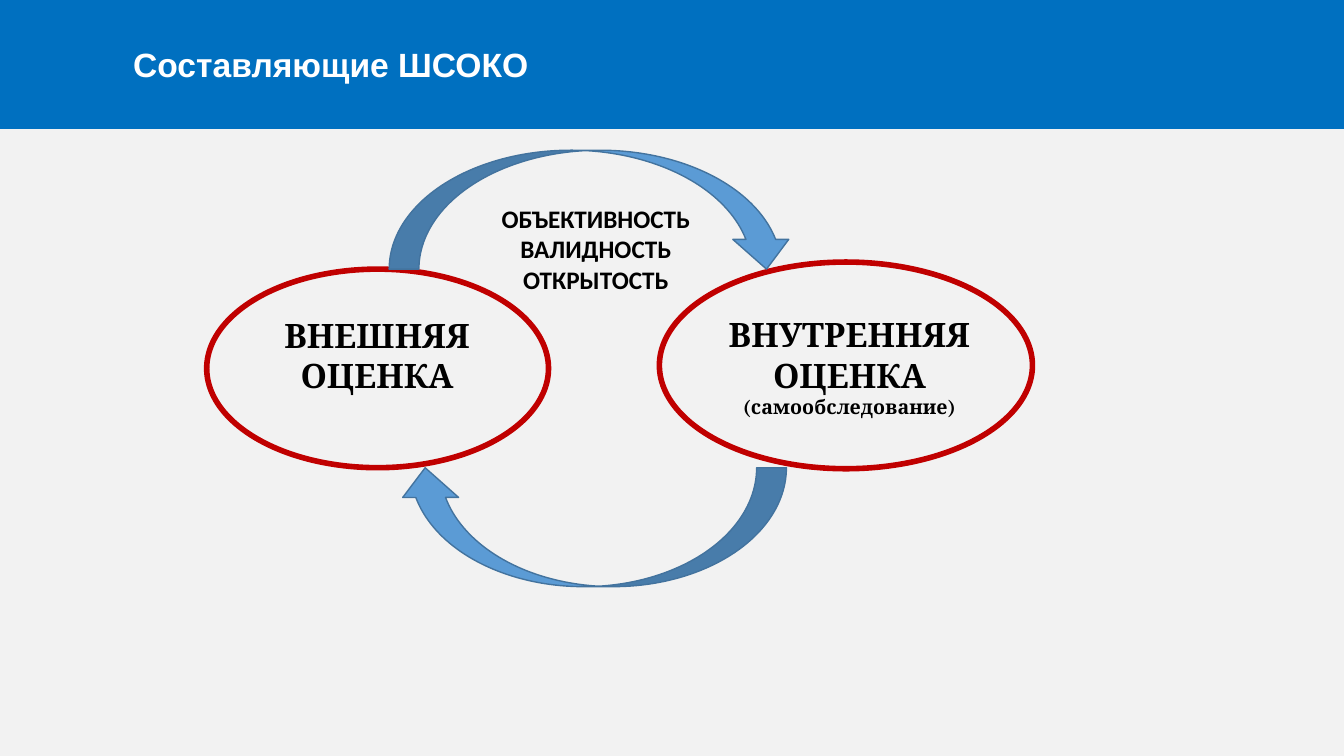
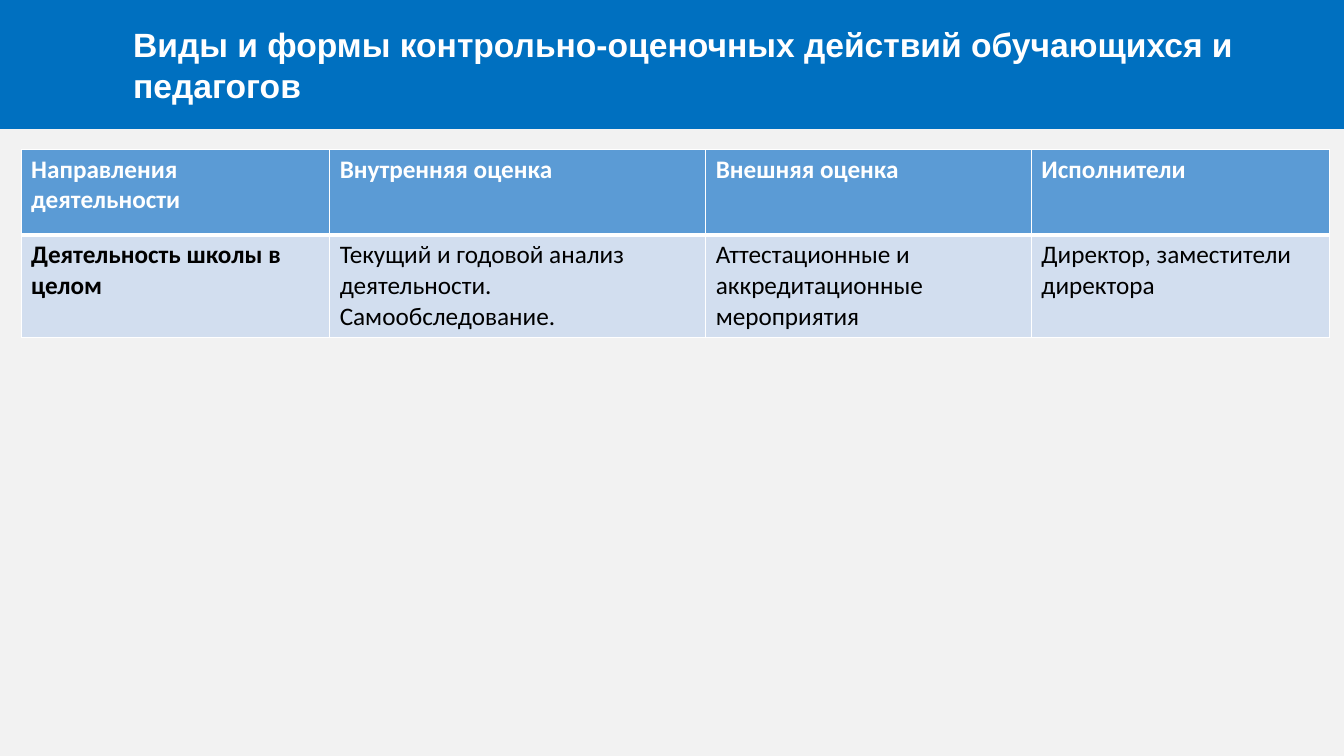
from dataclasses import dataclass

from lxml import etree
from pptx import Presentation
from pptx.dml.color import RGBColor
from pptx.enum.shapes import MSO_SHAPE
from pptx.enum.text import MSO_ANCHOR, MSO_AUTO_SIZE, PP_ALIGN
from pptx.oxml.ns import qn
from pptx.util import Emu, Pt

PX = 9144  # one hundred px to the inch
BAND = MSO_SHAPE.FLOWCHART_PROCESS
OVAL = MSO_SHAPE.OVAL
ARROW_OVER = MSO_SHAPE.CURVED_DOWN_ARROW
ARROW_UNDER = MSO_SHAPE.CURVED_UP_ARROW
LEFT, CENTER = PP_ALIGN.LEFT, PP_ALIGN.CENTER


@dataclass(frozen=True)
class Theme:
    paper: str = "F2F2F2"
    band: str = "0070C0"
    white: str = "FFFFFF"
    black: str = "000000"
    oval_line: str = "C00000"
    accent: str = "5B9BD5"
    accent_line: str = "43739E"
    table_body: str = "D2DEEF"
    title_font: str = "Arial"
    oval_font: str = "Cambria"
    body_font: str = "Calibri"
    title_size: int = 24
    oval_size: int = 24
    note_size: int = 14
    body_size: int = 18


THEME = Theme()
SLIDE_SIZE = (1333, 750)
BAND_BOX = (0, 0, 1333, 128)
TITLE_BOX = (122, 0, 1166, 128)

CYCLE_TITLE = "Составляющие ШСОКО"
OVALS = [(205, 267, 339, 197), (654, 260, 370, 205)]
ARROWS = [  # shape, box, mirrored
    (ARROW_OVER, (386, 149, 402, 118), False),
    (ARROW_UNDER, (394, 464, 386, 118), True),
]
ARROW_ADJUSTMENTS = (0.25, 0.47, 0.25)
LABELS = [  # box, font, lines with their sizes
    ((252, 307, 244, 91), THEME.oval_font, [("ВНЕШНЯЯ ОЦЕНКА", THEME.oval_size)]),
    ((693, 307, 299, 114), THEME.oval_font,
     [("ВНУТРЕННЯЯ ОЦЕНКА", THEME.oval_size),
      ("(самообследование)", THEME.note_size)]),
    ((465, 197, 252, 101), THEME.body_font,
     [(word, THEME.body_size)
      for word in ("ОБЪЕКТИВНОСТЬ", "ВАЛИДНОСТЬ", "ОТКРЫТОСТЬ")]),
]

TABLE_TITLE = "Виды и формы контрольно-оценочных действий обучающихся и педагогов"
TABLE_ORIGIN = (21, 148)
COLUMN_WIDTHS = [306, 373, 323, 296]
ROW_HEIGHTS = [85, 101]
TABLE_ROWS = [
    ["Направления деятельности", "Внутренняя оценка", "Внешняя оценка", "Исполнители"],
    ["Деятельность школы в целом",
     "Текущий и годовой анализ деятельности. Самообследование.",
     "Аттестационные и аккредитационные мероприятия",
     "Директор, заместители директора"],
]


def px(*lengths):
    return [Emu(length * PX) for length in lengths]


def color(code):
    return RGBColor.from_string(code)


def add_span(para, text, font, size, code, bold=True):
    span = para.add_run()
    span.text = text
    span.font.name = font
    span.font.size = Pt(size)
    span.font.bold = bold
    span.font.color.rgb = color(code)
    return span


def add_text_shadow(span):
    effects = etree.Element(qn("a:effectLst"))
    shadow = etree.SubElement(effects, qn("a:outerShdw"), blurRad="38100",
                              dist="38100", dir="5400000", algn="t")
    tint = etree.SubElement(shadow, qn("a:srgbClr"), val=THEME.black)
    etree.SubElement(tint, qn("a:alpha"), val="45000")
    span.font._element.find(qn("a:solidFill")).addnext(effects)


def add_figure(shapes, kind, box, fill=None, line=None, width=1):
    figure = shapes.add_shape(kind, *px(*box))
    figure.shadow.inherit = False
    if fill:
        figure.fill.solid()
        figure.fill.fore_color.rgb = color(fill)
    else:
        figure.fill.background()
    if line:
        figure.line.color.rgb = color(line)
        figure.line.width = Pt(width)
    else:
        figure.line.fill.background()
    return figure


def add_page(deck, title):
    page = deck.slides.add_slide(deck.slide_layouts[5])
    band = add_figure(page.shapes, BAND, BAND_BOX, THEME.band)
    heading = page.shapes.title
    heading._element.addprevious(band._element)
    heading.left, heading.top, heading.width, heading.height = px(*TITLE_BOX)
    frame = heading.text_frame
    frame.word_wrap = True
    frame.auto_size = MSO_AUTO_SIZE.NONE
    frame.vertical_anchor = MSO_ANCHOR.MIDDLE
    para = frame.paragraphs[0]
    para.alignment = LEFT
    add_text_shadow(add_span(para, title, THEME.title_font, THEME.title_size, THEME.white))
    return page


def add_label(page, box, font, lines):
    frame = page.shapes.add_textbox(*px(*box)).text_frame
    frame.word_wrap = True
    frame.auto_size = MSO_AUTO_SIZE.SHAPE_TO_FIT_TEXT
    for index, (text, size) in enumerate(lines):
        para = frame.add_paragraph() if index else frame.paragraphs[0]
        para.alignment = CENTER
        add_span(para, text, font, size, THEME.black)


def add_cell_borders(cell, bottom_width):
    """Put white borders ahead of the fill, as the cell schema requires."""
    properties = cell._tc.get_or_add_tcPr()
    for index, side in enumerate(("lnL", "lnR", "lnT", "lnB")):
        width = bottom_width if side == "lnB" else 1
        border = etree.Element(qn(f"a:{side}"), w=str(Pt(width)))
        fill = etree.SubElement(border, qn("a:solidFill"))
        etree.SubElement(fill, qn("a:srgbClr"), val=THEME.white)
        properties.insert(index, border)


def build_cycle(deck):
    page = add_page(deck, CYCLE_TITLE)
    cycle = page.shapes.add_group_shape().shapes
    for box in OVALS:
        add_figure(cycle, OVAL, box, line=THEME.oval_line, width=4)
    for kind, box, mirrored in ARROWS:
        arrow = add_figure(cycle, kind, box, THEME.accent, THEME.accent_line)
        for index, value in enumerate(ARROW_ADJUSTMENTS):
            arrow.adjustments[index] = value
        if mirrored:
            arrow._element.spPr.get_or_add_xfrm().set("flipH", "1")
    for label in LABELS:
        add_label(page, *label)


def build_table(deck):
    page = add_page(deck, TABLE_TITLE)
    box = (*TABLE_ORIGIN, sum(COLUMN_WIDTHS), sum(ROW_HEIGHTS))
    table = page.shapes.add_table(len(TABLE_ROWS), len(COLUMN_WIDTHS), *px(*box)).table
    for column, width in zip(table.columns, px(*COLUMN_WIDTHS)):
        column.width = width
    for row, height in zip(table.rows, px(*ROW_HEIGHTS)):
        row.height = height
    for row_index, texts in enumerate(TABLE_ROWS):
        header = row_index == 0
        for column_index, text in enumerate(texts):
            cell = table.cell(row_index, column_index)
            cell.fill.solid()
            cell.fill.fore_color.rgb = color(THEME.accent if header else THEME.table_body)
            add_cell_borders(cell, 3 if header else 1)
            add_span(cell.text_frame.paragraphs[0], text, THEME.body_font, THEME.body_size,
                     THEME.white if header else THEME.black,
                     bold=header or column_index == 0)


def main():
    deck = Presentation()
    deck.slide_width, deck.slide_height = px(*SLIDE_SIZE)
    backdrop = deck.slide_master.background.fill
    backdrop.solid()
    backdrop.fore_color.rgb = color(THEME.paper)
    build_cycle(deck)
    build_table(deck)
    deck.save("out.pptx")


if __name__ == "__main__":
    main()
